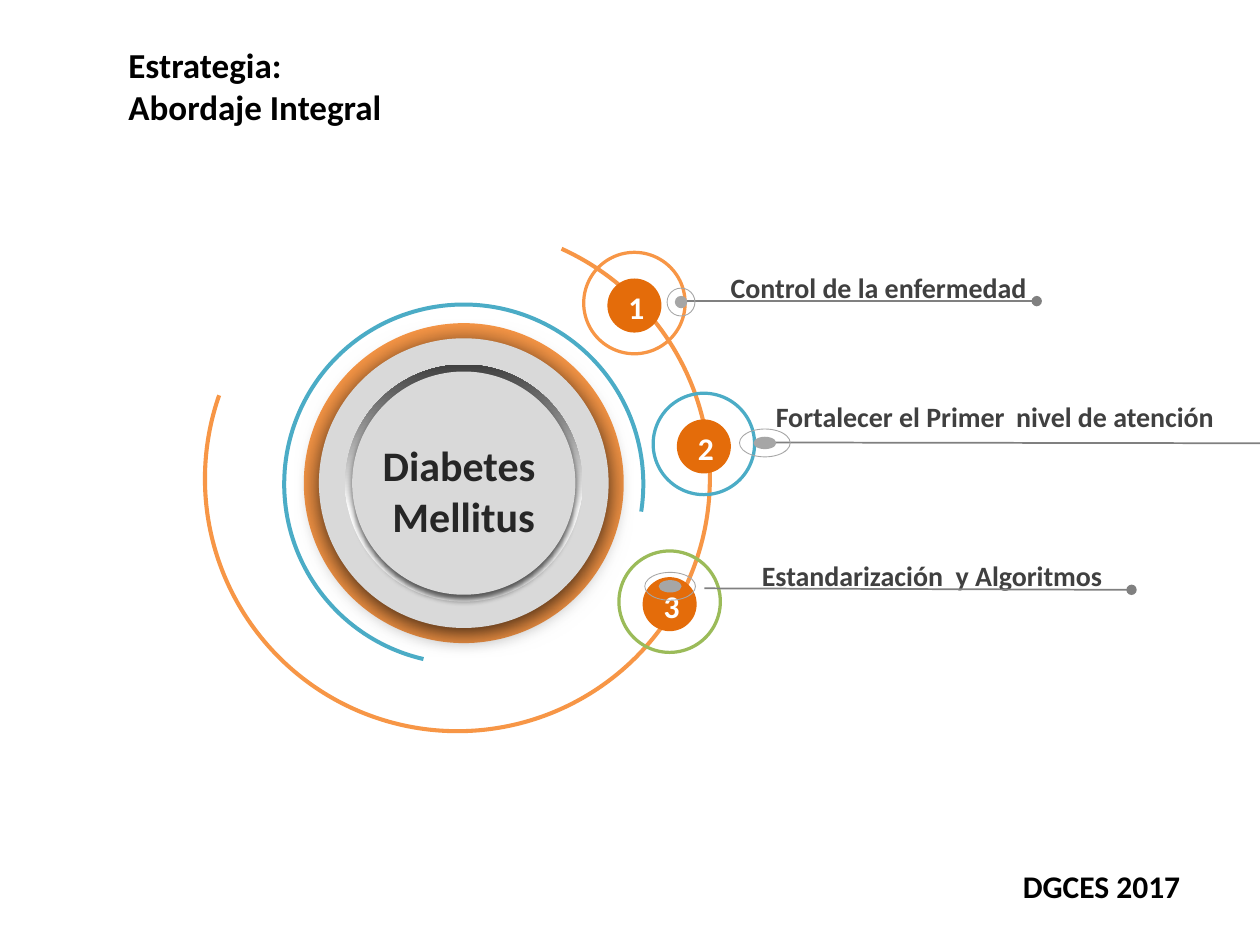
from lxml import etree
from pptx import Presentation
from pptx.dml.color import RGBColor
from pptx.enum.shapes import MSO_CONNECTOR, MSO_SHAPE
from pptx.enum.text import MSO_AUTO_SIZE, PP_ALIGN
from pptx.oxml.ns import qn
from pptx.util import Cm, Pt

ELLIPSE, DONUT, ARC = MSO_SHAPE.OVAL, MSO_SHAPE.DONUT, MSO_SHAPE.BLOCK_ARC
STRAIGHT = MSO_CONNECTOR.STRAIGHT
LEFT, CENTER, JUSTIFY = PP_ALIGN.LEFT, PP_ALIGN.CENTER, PP_ALIGN.JUSTIFY
GROW = MSO_AUTO_SIZE.SHAPE_TO_FIT_TEXT

COLORS = {
    "orange": "F79646", "dark orange": "E46C0A", "blue": "4BACC6",
    "green": "9BBB59", "disc": "D9D9D9", "marker": "A6A6A6",
    "line": "808080", "label": "404040", "hub text": "262626",
    "black": "000000", "white": "FFFFFF",
}


def rgb(name):
    return RGBColor.from_string(COLORS[name])


class SlideBuilder:
    font = "Calibri"
    ring_thickness = 0.031

    def __init__(self, slide):
        self.slide = slide

    def shape(self, kind, center, width, height, color, adjustments=()):
        """Add a borderless shape around its centre."""
        x, y = center
        shape = self.slide.shapes.add_shape(
            kind, Cm(x - width / 2), Cm(y - height / 2), Cm(width), Cm(height))
        shape.shadow.inherit = False
        shape.fill.solid()
        shape.fill.fore_color.rgb = rgb(color)
        shape.line.fill.background()
        for index, value in enumerate(adjustments):
            shape.adjustments[index] = value
        return shape

    def circle(self, center, diameter, color):
        return self.shape(ELLIPSE, center, diameter, diameter, color)

    def ring(self, center, width, height, color):
        return self.shape(DONUT, center, width, height, color, [self.ring_thickness])

    def arc(self, center, diameter, color, rotation, adjustments):
        shape = self.shape(ARC, center, diameter, diameter, color, adjustments)
        shape.rotation = rotation

    def gradient(self, shape, stops, angle):
        shape.fill.gradient()
        shape.fill.gradient_angle = angle
        for stop, (position, color) in zip(shape.fill.gradient_stops, stops):
            stop.position = position
            stop.color.rgb = rgb(color)

    def shadow(self, shape, blur, distance, opacity):
        """Cast a black shadow straight down."""
        effects = shape._element.spPr.find(qn("a:effectLst"))
        outer = etree.SubElement(
            effects, qn("a:outerShdw"), blurRad=str(Pt(blur)), dist=str(Pt(distance)),
            dir="5400000", algn="t", rotWithShape="0")
        color = etree.SubElement(outer, qn("a:srgbClr"), val=COLORS["black"])
        etree.SubElement(color, qn("a:alpha"), val=str(opacity * 1000))

    def text(self, box, paragraphs, size, color, align=LEFT, wrap=True):
        """Each paragraph is a list of (text, size, bold) runs or a plain string."""
        frame = self.slide.shapes.add_textbox(*map(Cm, box)).text_frame
        frame.word_wrap = wrap
        frame.auto_size = GROW
        for index, runs in enumerate(paragraphs):
            paragraph = frame.add_paragraph() if index else frame.paragraphs[0]
            paragraph.alignment = align
            if isinstance(runs, str):
                runs = [(runs, size, True)]
            for words, run_size, bold in runs:
                run = paragraph.add_run()
                run.text = words
                run.font.name = self.font
                run.font.size = Pt(run_size)
                run.font.bold = bold
                run.font.color.rgb = rgb(color)

    def pointer(self, start, end):
        """Add a thin line that ends in a round dot."""
        connector = self.slide.shapes.add_connector(STRAIGHT, *map(Cm, start + end))
        connector.line.color.rgb = rgb("line")
        connector.line.width = Pt(1)
        etree.SubElement(connector.line._get_or_add_ln(), qn("a:tailEnd"), type="oval")
        etree.SubElement(connector._element.spPr, qn("a:effectLst"))


def main():
    presentation = Presentation()
    presentation.slide_width, presentation.slide_height = Cm(25.4), Cm(19.05)
    slide = presentation.slides.add_slide(presentation.slide_layouts[6])
    builder = SlideBuilder(slide)

    # Open arcs around the hub
    builder.arc((9.22, 9.65), 10.26, "orange", 199.5, [56.92, 215.88, 0.008])
    builder.arc((9.35, 9.76), 7.32, "blue", 8.1, [56.92, 0.43, 0.011])

    # Central hub
    hub = (9.35, 9.74)
    builder.circle(hub, 6.45, "orange")
    builder.shadow(builder.circle(hub, 5.84, "disc"), 14, 3, 76)
    rim = builder.circle(hub, 4.78, "disc")
    builder.gradient(rim, [(0.39, "white"), (1, "label")], 90)
    builder.shadow(builder.circle(hub, 4.5, "disc"), 4, 3, 67)
    builder.text((6.53, 8.74, 5.64, 2.31), ["Diabetes ", "Mellitus"],
                 24, "hub text", CENTER)

    # Numbered nodes
    nodes = [((12.79, 6.11), "orange"), ((14.19, 8.95), "blue"), ((13.5, 12.13), "green")]
    for number, ((x, y), color) in enumerate(nodes, 1):
        builder.ring((x, y), 2.11, 2.11, color)
        builder.circle((x, y + 0.05), 1.09, "dark orange")
        builder.text((x - 0.37, y - 0.42, 0.84, 1.02), [str(number)],
                     18, "white", wrap=False)

    # Labels
    labels = [
        ((14.48, 5.33, 9.04, 0.94), "Control de la enfermedad"),
        ((15.39, 7.92, 9.7, 0.94), [("Fortalecer el Primer", 16, True), ("  ", 14, False),
                                    ("nivel de atención", 16, True)]),
        ((15.11, 11.13, 10.29, 0.94), "Estandarización  y Algoritmos"),
    ]
    for box, label in labels:
        builder.text(box, [label], 16, "label", JUSTIFY)

    # Pointers with their start markers: line, marker centre, ring and dot widths
    pointers = [
        ((13.79, 6.07), (20.9, 6.07), (13.73, 6.09), 0.58, 0.25),
        ((15.52, 8.92), (28.42, 8.94), (15.42, 8.93), 1.04, 0.46),
        ((14.2, 11.86), (22.81, 11.89), (13.51, 11.82), 1.04, 0.46),
    ]
    for start, end, marker, ring_width, dot_width in pointers:
        builder.pointer(start, end)
        builder.ring(marker, ring_width, 0.58, "marker")
        builder.shape(ELLIPSE, marker, dot_width, 0.25, "marker")

    # Title and footer
    builder.text((2.34, 0.76, 9.07, 1.96), ["Estrategia:", "Abordaje Integral"], 20, "black")
    builder.text((20.37, 17.35, 3.71, 1.02), ["DGCES 2017"], 18, "black", wrap=False)

    presentation.save("out.pptx")


if __name__ == "__main__":
    main()
